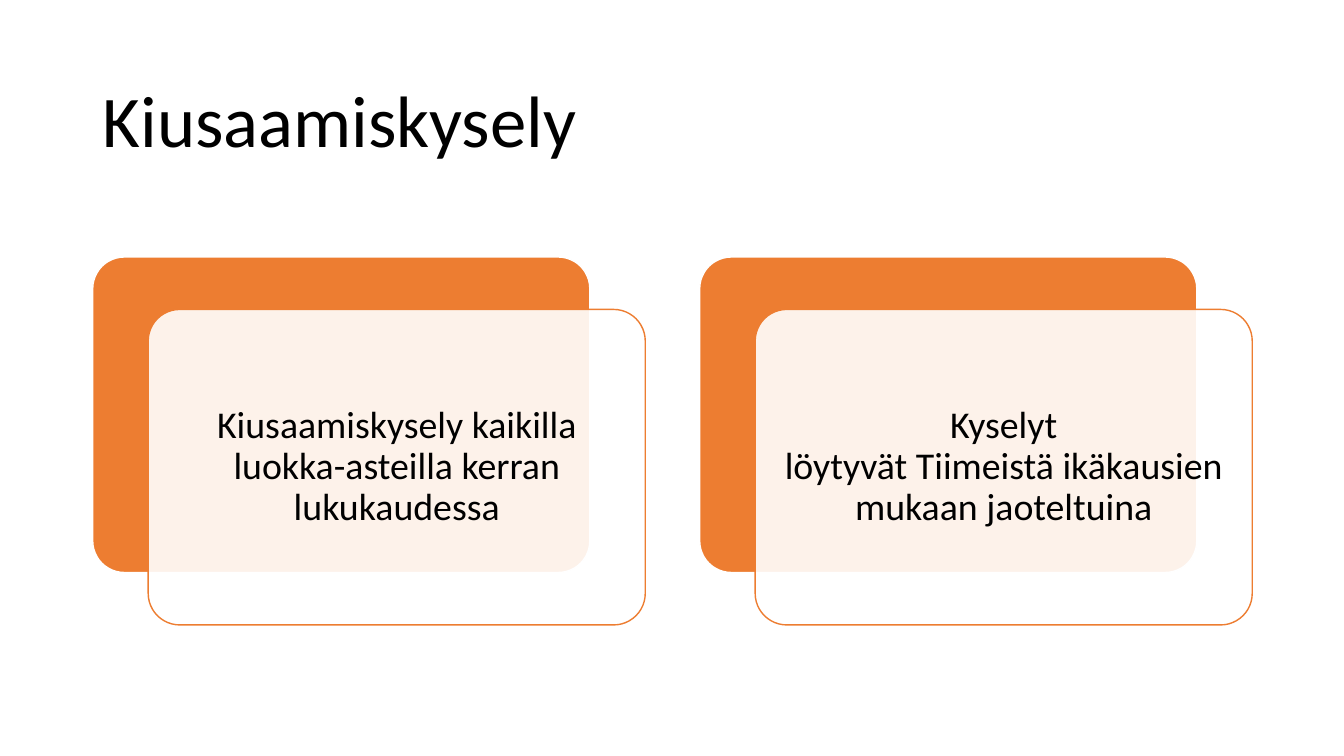
from lxml import etree
from pptx import Presentation
from pptx.dml.color import RGBColor
from pptx.enum.shapes import MSO_SHAPE
from pptx.enum.text import MSO_ANCHOR, PP_ALIGN
from pptx.oxml.ns import qn
from pptx.util import Emu, Pt

PX = 9144
ORANGE = RGBColor(0xED, 0x7D, 0x31)
WHITE = RGBColor(0xFF, 0xFF, 0xFF)
BLACK = RGBColor(0x00, 0x00, 0x00)
FONT = "Calibri"

CARD_TOP = 255
CARD_WIDTH = 493
CARD_HEIGHT = 313
CARD_LEFT = 92
CARD_STEP = 602
FRONT_SHIFT_X = 55
FRONT_SHIFT_Y = 52
TEXT_MARGIN = 9
INSET = 11

CARDS = [
    ["Kiusaamiskysely kaikilla luokka-asteilla kerran lukukaudessa"],
    ["Kyselyt", "löytyvät Tiimeistä ikäkausien", "mukaan jaoteltuina"],
]


def px(*lengths):
    return [Emu(length * PX) for length in lengths]


def add_panel(page, left, top, fill, line, opacity=100):
    panel = page.shapes.add_shape(
        MSO_SHAPE.ROUNDED_RECTANGLE, *px(left, top, CARD_WIDTH, CARD_HEIGHT)
    )
    panel.adjustments[0] = 0.1
    panel.shadow.inherit = False
    panel.fill.solid()
    panel.fill.fore_color.rgb = fill
    panel.line.color.rgb = line
    panel.line.width = Pt(1)
    if opacity < 100:
        color = panel.fill._xPr.find(qn("a:solidFill"))[0]
        etree.SubElement(color, qn("a:alpha")).set("val", str(opacity * 1000))


def add_text(page, place, lines, size, align, inset=None):
    box = page.shapes.add_textbox(*px(*place))
    frame = box.text_frame
    frame.word_wrap = True
    frame.vertical_anchor = MSO_ANCHOR.MIDDLE
    if inset is not None:
        frame.margin_left, frame.margin_top = px(inset, inset)
        frame.margin_right, frame.margin_bottom = px(inset, inset)
    para = frame.paragraphs[0]
    para.alignment = align
    para.line_spacing = 0.9
    para.font.size = Pt(size)
    for index, line in enumerate(lines):
        if index:
            para.add_line_break()
        span = para.add_run()
        span.text = line
        span.font.name = FONT
        span.font.size = Pt(size)
        span.font.color.rgb = BLACK


def add_card(page, left, lines):
    front_left = left + FRONT_SHIFT_X
    front_top = CARD_TOP + FRONT_SHIFT_Y
    add_panel(page, left, CARD_TOP, ORANGE, WHITE)
    add_panel(page, front_left, front_top, WHITE, ORANGE, opacity=90)
    place = (
        front_left + TEXT_MARGIN,
        front_top + TEXT_MARGIN,
        CARD_WIDTH - 2 * TEXT_MARGIN,
        CARD_HEIGHT - 2 * TEXT_MARGIN,
    )
    add_text(page, place, lines, 27, PP_ALIGN.CENTER, INSET)


def main():
    deck = Presentation()
    deck.slide_width, deck.slide_height = px(1333, 750)
    page = deck.slides.add_slide(deck.slide_layouts[6])
    add_text(page, (92, 61, 1150, 124), ["Kiusaamiskysely"], 52, PP_ALIGN.LEFT)
    for index, lines in enumerate(CARDS):
        add_card(page, CARD_LEFT + index * CARD_STEP, lines)
    deck.save("out.pptx")


if __name__ == "__main__":
    main()
